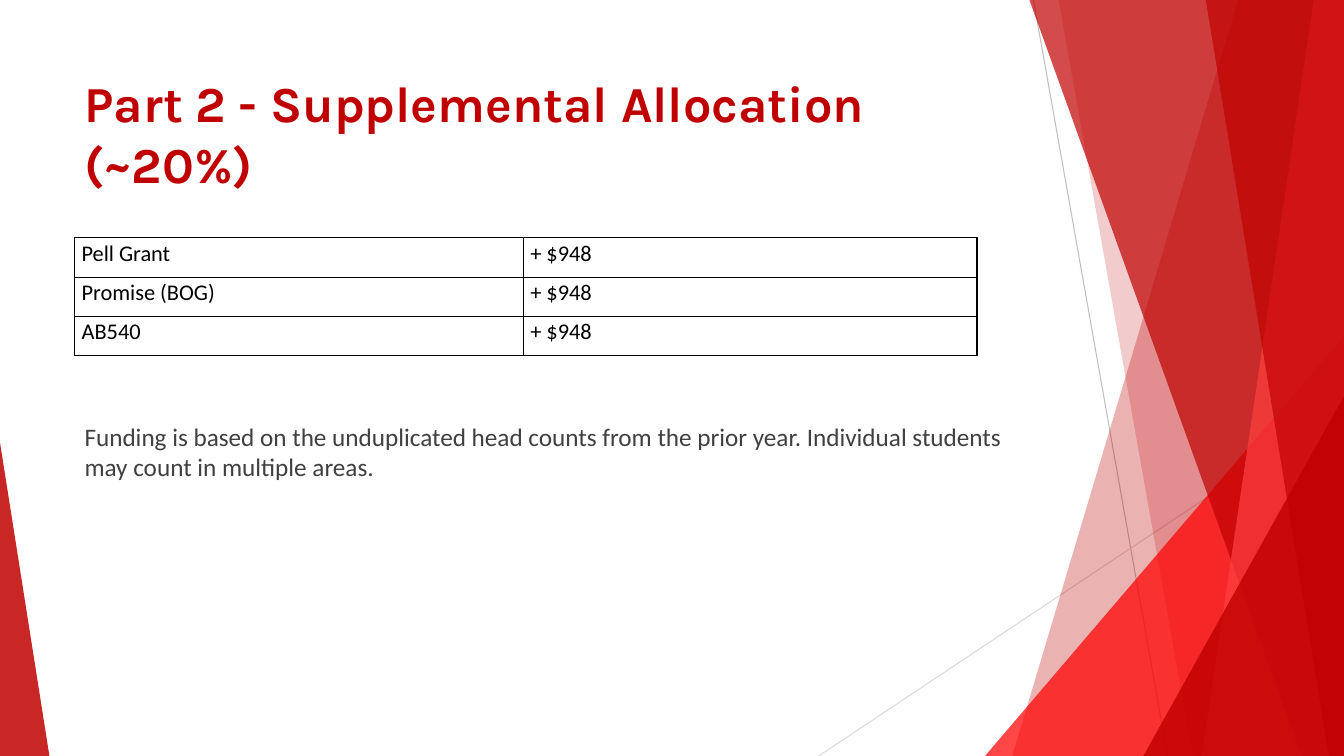
from lxml.etree import SubElement
from pptx import Presentation
from pptx.dml.color import RGBColor
from pptx.enum.shapes import MSO_CONNECTOR, MSO_SHAPE
from pptx.enum.text import MSO_ANCHOR
from pptx.oxml import parse_xml
from pptx.oxml.ns import nsdecls, qn
from pptx.util import Inches, Pt

WIDE, HIGH = 13.33, 7.5
BLACK = RGBColor(0x00, 0x00, 0x00)
GREY = RGBColor(0x40, 0x40, 0x40)
SILVER = RGBColor(0xBF, 0xBF, 0xBF)
PALE = RGBColor(0xD9, 0xD9, 0xD9)
DARK = RGBColor(0xC0, 0x00, 0x00)
DEEP = RGBColor(0xBF, 0x00, 0x00)
RED = RGBColor(0xFF, 0x00, 0x00)
CORAL = RGBColor(0xFF, 0x40, 0x40)

GRANTS = [
    ("Pell Grant", "+ $948"),
    ("Promise (BOG)", "+ $948"),
    ("AB540", "+ $948"),
]


def add_line(slide, start, end, color):
    ends = [Inches(v) for v in (*start, *end)]
    line = slide.shapes.add_connector(MSO_CONNECTOR.STRAIGHT, *ends)
    line.line.color.rgb = color
    line.line.width = Pt(0.75)
    SubElement(line._element.spPr, qn("a:effectLst"))


def paint(shape, color, alpha):
    shape.shadow.inherit = False
    shape.line.fill.background()
    shape.fill.solid()
    shape.fill.fore_color.rgb = color
    tint = shape._element.spPr.find(qn("a:solidFill"))[0]
    SubElement(tint, qn("a:alpha"), val=str(alpha * 1000))


def add_band(slide, top, foot, color, alpha):
    """Band from the given top and foot to the right edge of the slide."""
    points = [(WIDE, 0), (WIDE, HIGH), (foot, HIGH)]
    build = slide.shapes.build_freeform(Inches(top), 0)
    build.add_line_segments([(Inches(x), Inches(y)) for x, y in points])
    paint(build.convert_to_shape(), color, alpha)


def add_wedge(slide, left, top, width, peak, color, alpha):
    """Triangle that stands on the bottom edge of the slide."""
    box = [Inches(v) for v in (left, top, width, HIGH - top)]
    wedge = slide.shapes.add_shape(MSO_SHAPE.ISOSCELES_TRIANGLE, *box)
    wedge.adjustments[0] = peak
    paint(wedge, color, alpha)


def style(para, font, size, color, bold=False):
    for run in para.runs:
        run.font.name = font
        run.font.size = Pt(size)
        run.font.color.rgb = color
        run.font.bold = bold


def add_text(slide, box, text, *look):
    shape = slide.shapes.add_textbox(*[Inches(v) for v in box])
    frame = shape.text_frame
    frame.word_wrap = True
    frame.vertical_anchor = MSO_ANCHOR.TOP
    frame.text = text
    style(frame.paragraphs[0], *look)


def add_edges(cell):
    props = cell._tc.get_or_add_tcPr()
    for spot, side in enumerate(("lnL", "lnR", "lnT", "lnB")):
        edge = parse_xml(
            f'<a:{side} {nsdecls("a")} w="{Pt(1)}"><a:solidFill>'
            f'<a:srgbClr val="{BLACK}"/></a:solidFill></a:{side}>'
        )
        props.insert(spot, edge)


def add_grid(slide, left, top, widths, height, rows):
    box = (left, top, sum(widths), height * len(rows))
    frame = slide.shapes.add_table(
        len(rows), len(widths), *[Inches(v) for v in box]
    )
    table = frame.table
    table.first_row = table.horz_banding = False
    for col, width in zip(table.columns, widths):
        col.width = Inches(width)
    for row, texts in zip(table.rows, rows):
        row.height = Inches(height)
        for cell, text in zip(row.cells, texts):
            cell.margin_left = cell.margin_right = Inches(0.07)
            cell.margin_top = cell.margin_bottom = 0
            cell.fill.background()
            cell.text_frame.text = text
            para = cell.text_frame.paragraphs[0]
            para.line_spacing = 1.07
            style(para, "Calibri", 16, BLACK)
            add_edges(cell)


def main():
    deck = Presentation()
    deck.slide_width, deck.slide_height = Inches(WIDE), Inches(HIGH)
    slide = deck.slides.add_slide(deck.slide_layouts[6])

    # Backdrop, from back to front
    add_line(slide, (10.25, 0), (11.58, HIGH), SILVER)
    add_line(slide, (WIDE, 4.03), (8.12, HIGH), PALE)
    add_band(slide, 12.28, 10.04, DARK, 30)
    add_band(slide, 10.5, 11.83, DARK, 20)
    add_wedge(slide, 9.77, 3.33, 3.56, 1, RED, 72)
    add_band(slide, 10.21, 12.91, DEEP, 70)
    add_band(slide, 13.03, 11.92, CORAL, 70)
    add_band(slide, 11.96, 13.18, DARK, 65)
    add_wedge(slide, 11.34, 3.93, 1.99, 1, DARK, 80)
    add_wedge(slide, 0, 4.39, 0.49, 0, DARK, 85)

    # Title
    add_text(slide, (0.74, 0.67, 9.6, 1.44),
             "Part 2 - Supplemental Allocation (~20%)",
             "Karla", 36, DARK, True)

    # Funding note
    add_text(slide, (0.74, 4.13, 9.4, 2.47),
             "Funding is based on the unduplicated head counts from the prior "
             "year. Individual students may count in multiple areas.",
             "Calibri", 18, GREY)

    # Grant amounts
    add_grid(slide, 0.74, 2.36, (4.45, 4.5), 0.39, GRANTS)

    deck.save("out.pptx")


if __name__ == "__main__":
    main()
